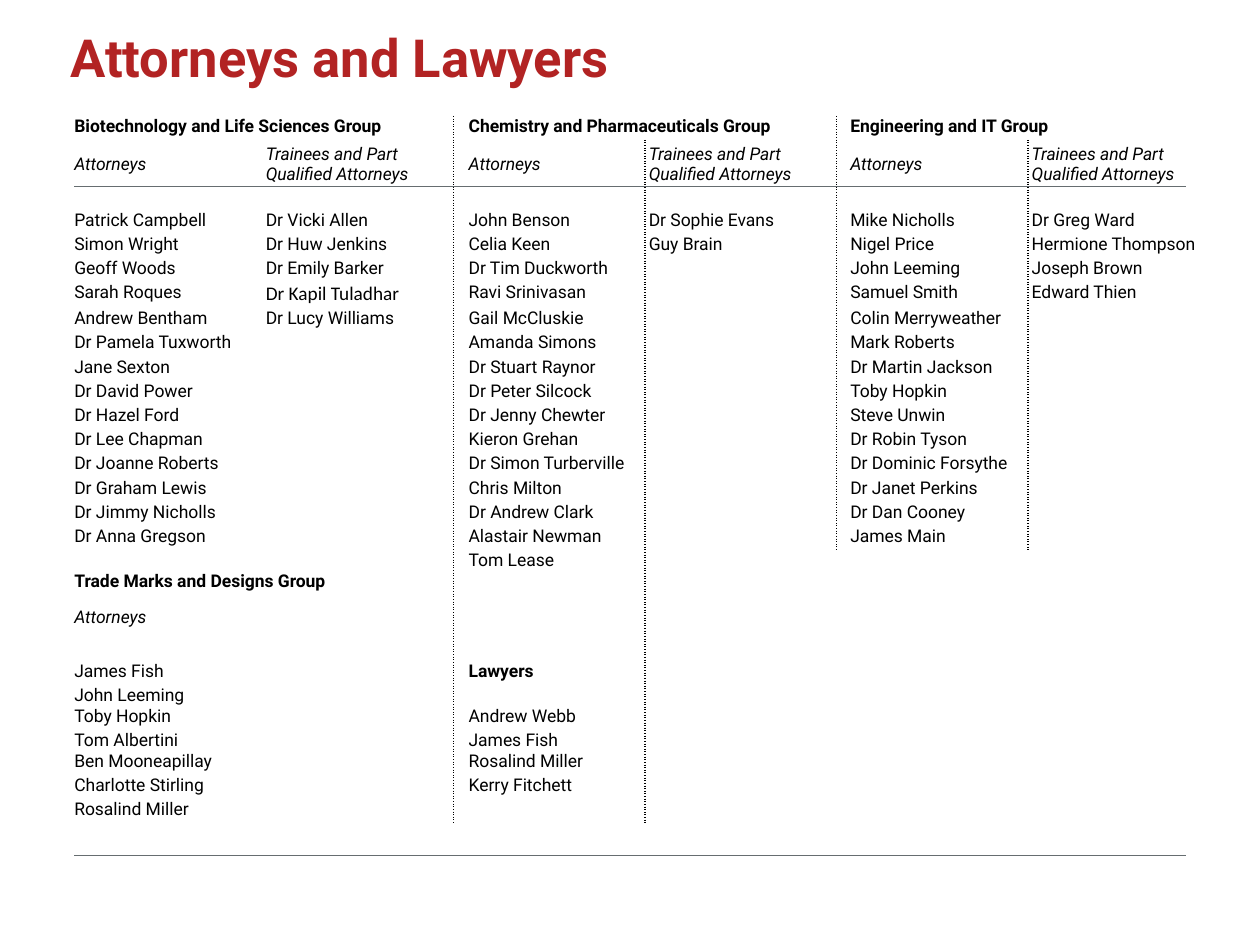
from lxml import etree
from pptx import Presentation
from pptx.dml.color import RGBColor
from pptx.enum.shapes import MSO_CONNECTOR
from pptx.enum.text import MSO_ANCHOR, MSO_AUTO_SIZE
from pptx.oxml.ns import qn
from pptx.util import Inches, Pt

STRAIGHT = MSO_CONNECTOR.STRAIGHT
TOP, MIDDLE = MSO_ANCHOR.TOP, MSO_ANCHOR.MIDDLE
FIT_SHAPE = MSO_AUTO_SIZE.SHAPE_TO_FIT_TEXT
COLORS = {"title": "B22323", "text": "000000", "divider": "000000", "rule": "666D70"}
NO_STYLE = "{2D5ABB26-0587-4C30-8999-92F81FD0307C}"
GRID_COLUMNS, GRID_ROWS = 100, 75

ROW_HEIGHTS = [1.9, 3.9, 1.7, 1.9, 1.9, 1.9, 2.1, 1.9, 2, 1.9, 1.9, 1.9, 1.9, 2,
               1.9, 1.9, 1.9, 1.7, 1.9, 3.5, 1.7, 1.9, 1.7, 1.9, 1.7, 1.9, 1.9, 1.9]
COLUMN_WIDTHS = [15.2] * 6
COLUMN_INDENTS = [0, 0, 0.9, 0, 0.8, 0]
DIVIDERS = {2: len(ROW_HEIGHTS), 4: 17}
HEADINGS = {
    (0, 0): "Biotechnology and Life Sciences Group",
    (0, 2): "Chemistry and Pharmaceuticals Group",
    (0, 4): "Engineering and IT Group",
    (18, 0): "Trade Marks and Designs Group",
    (21, 2): "Lawyers",
}
MERGED_HEADINGS = [(0, 0), (0, 2), (0, 4), (18, 0)]
SUBHEADINGS = {(1, column): "Attorneys" for column in (0, 2, 4)}
SUBHEADINGS |= {(1, column): "Trainees and Part Qualified Attorneys" for column in (1, 3, 5)}
SUBHEADINGS[19, 0] = "Attorneys"
NAMES = {
    (3, 0): ["Patrick Campbell", "Simon Wright", "Geoff Woods", "Sarah Roques",
             "Andrew Bentham", "Dr Pamela Tuxworth", "Jane Sexton", "Dr David Power",
             "Dr Hazel Ford", "Dr Lee Chapman", "Dr Joanne Roberts", "Dr Graham Lewis",
             "Dr Jimmy Nicholls", "Dr Anna Gregson"],
    (3, 1): ["Dr Vicki Allen", "Dr Huw Jenkins", "Dr Emily Barker", "Dr Kapil Tuladhar",
             "Dr Lucy Williams"],
    (3, 2): ["John Benson", "Celia Keen", "Dr Tim Duckworth", "Ravi Srinivasan",
             "Gail McCluskie", "Amanda Simons", "Dr Stuart Raynor", "Dr Peter Silcock",
             "Dr Jenny Chewter", "Kieron Grehan", "Dr Simon Turberville", "Chris Milton",
             "Dr Andrew Clark", "Alastair Newman", "Tom Lease"],
    (3, 3): ["Dr Sophie Evans", "Guy Brain"],
    (3, 4): ["Mike Nicholls", "Nigel Price", "John Leeming", "Samuel Smith",
             "Colin Merryweather", "Mark Roberts", "Dr Martin Jackson", "Toby Hopkin",
             "Steve Unwin", "Dr Robin Tyson", "Dr Dominic Forsythe", "Dr Janet Perkins",
             "Dr Dan Cooney", "James Main"],
    (3, 5): ["Dr Greg Ward", "Hermione Thompson", "Joseph Brown", "Edward Thien"],
    (21, 0): ["James Fish", "John Leeming", "Toby Hopkin", "Tom Albertini",
              "Ben Mooneapillay", "Charlotte Stirling", "Rosalind Miller"],
    (23, 2): ["Andrew Webb", "James Fish", "Rosalind Miller", "Kerry Fitchett"],
}


def write_text(paragraph, text, size=10, font="Roboto", color="text", bold=False,
               italic=False, indent=0):
    """Write one formatted run, or only set the line size when the text is empty."""
    if not text:
        etree.SubElement(paragraph._p, qn("a:endParaRPr"), sz=str(size * 100))
        return
    if indent:
        paragraph._p.get_or_add_pPr().set("marL", str(indent))
    run = paragraph.add_run()
    run.text = text
    run.font.size = Pt(size)
    run.font.name = font
    run.font.bold = bold
    run.font.italic = italic
    run.font.color.rgb = RGBColor.from_string(COLORS[color])


def cell_contents():
    """Map each filled cell to its text and format."""
    contents = {place: (text, {"bold": True}) for place, text in HEADINGS.items()}
    contents |= {place: (text, {"italic": True}) for place, text in SUBHEADINGS.items()}
    for (first_row, column), names in NAMES.items():
        for row, name in enumerate(names, first_row):
            contents[row, column] = (name, {})
    contents[6, 1] = (contents[6, 1][0], {"size": 11, "font": "Calibri"})
    return contents


class SlideBuilder:
    """Place styled elements on a slide by grid columns and rows."""

    def __init__(self, presentation):
        """Add a blank slide and work out the grid units."""
        self.slide = presentation.slides.add_slide(presentation.slide_layouts[6])
        self.unit_x = presentation.slide_width / GRID_COLUMNS
        self.unit_y = presentation.slide_height / GRID_ROWS

    def across(self, columns):
        """Turn grid columns into a length."""
        return round(columns * self.unit_x)

    def down(self, rows):
        """Turn grid rows into a length."""
        return round(rows * self.unit_y)

    def rule(self, left, right, row):
        """Draw a thin horizontal rule."""
        line = self.slide.shapes.add_connector(
            STRAIGHT, self.across(left), self.down(row), self.across(right), self.down(row))
        line.line.color.rgb = RGBColor.from_string(COLORS["rule"])
        line.line.width = Pt(0.5)
        etree.SubElement(line._element.spPr, qn("a:effectLst"))

    def title(self, text, left, top, width, height):
        """Add the slide title."""
        box = self.slide.shapes.add_textbox(
            self.across(left), self.down(top), self.across(width), self.down(height))
        frame = box.text_frame
        frame.word_wrap = False
        frame.auto_size = FIT_SHAPE
        frame.vertical_anchor = MIDDLE
        paragraph = frame.paragraphs[0]
        paragraph.line_spacing = Pt(36)
        write_text(paragraph, text, size=30, color="title", bold=True, indent=self.across(0.9))

    def border(self, cell, side):
        """Give one side of a cell a dotted border."""
        line = etree.SubElement(cell._tc.get_or_add_tcPr(), qn(f"a:ln{side}"), w=str(Pt(1)))
        fill = etree.SubElement(line, qn("a:solidFill"))
        etree.SubElement(fill, qn("a:srgbClr"), val=COLORS["divider"])
        etree.SubElement(line, qn("a:prstDash"), val="sysDot")

    def table(self, left, top, contents):
        """Add the table of people with its dotted dividers."""
        table = self.slide.shapes.add_table(
            len(ROW_HEIGHTS), len(COLUMN_WIDTHS), self.across(left), self.down(top),
            self.across(sum(COLUMN_WIDTHS)), self.down(sum(ROW_HEIGHTS))).table
        table.first_row = table.horz_banding = False
        table._tbl.tblPr.find(qn("a:tableStyleId")).text = NO_STYLE
        for column, width in zip(table.columns, COLUMN_WIDTHS):
            column.width = self.across(width)
        for row, height in enumerate(ROW_HEIGHTS):
            table.rows[row].height = self.down(height)
            for column, indent in enumerate(COLUMN_INDENTS):
                cell = table.cell(row, column)
                for side, divider in (("L", column), ("R", column + 1)):
                    if row < DIVIDERS.get(divider, 0):
                        self.border(cell, side)
                cell.fill.background()
                cell.margin_left = cell.margin_right = self.across(0.3)
                cell.margin_top = cell.margin_bottom = 0
                cell.vertical_anchor = MIDDLE if (row, column) in SUBHEADINGS else TOP
                text, style = contents.get((row, column), ("", {}))
                write_text(cell.text_frame.paragraphs[0], text,
                           indent=self.across(indent), **style)
        for row, column in MERGED_HEADINGS:
            table.cell(row, column).merge(table.cell(row, column + 1))


def main():
    """Build and save the slide."""
    presentation = Presentation()
    presentation.slide_width, presentation.slide_height = Inches(10), Inches(7.5)
    builder = SlideBuilder(presentation)
    for row in (14.8, 67.9):
        builder.rule(5.9, 94.1, row)
    builder.table(5.6, 9.2, cell_contents())
    builder.title("Attorneys and Lawyers", 3.7, 1.4, 47.9, 6.1)
    presentation.save("out.pptx")


if __name__ == "__main__":
    main()
